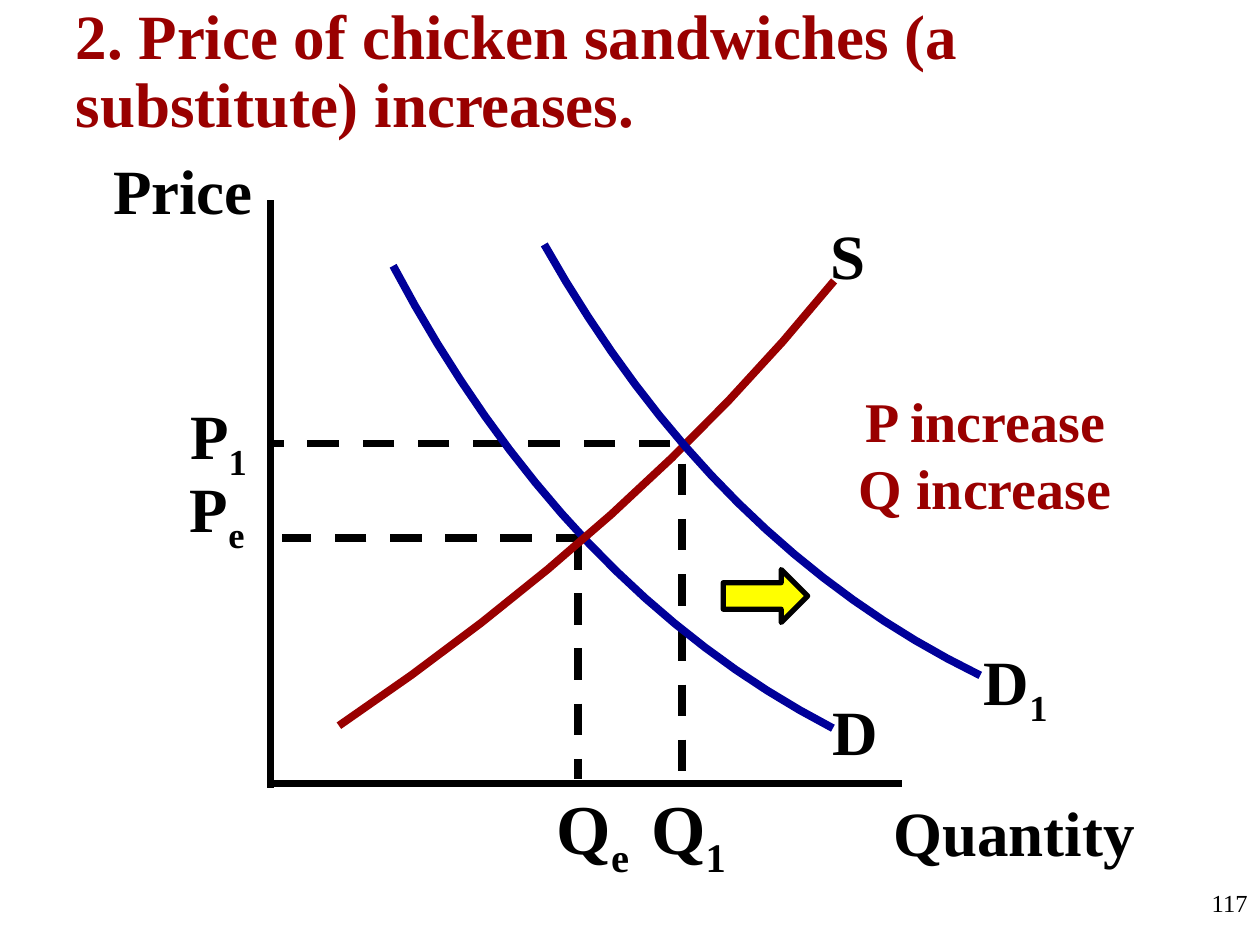
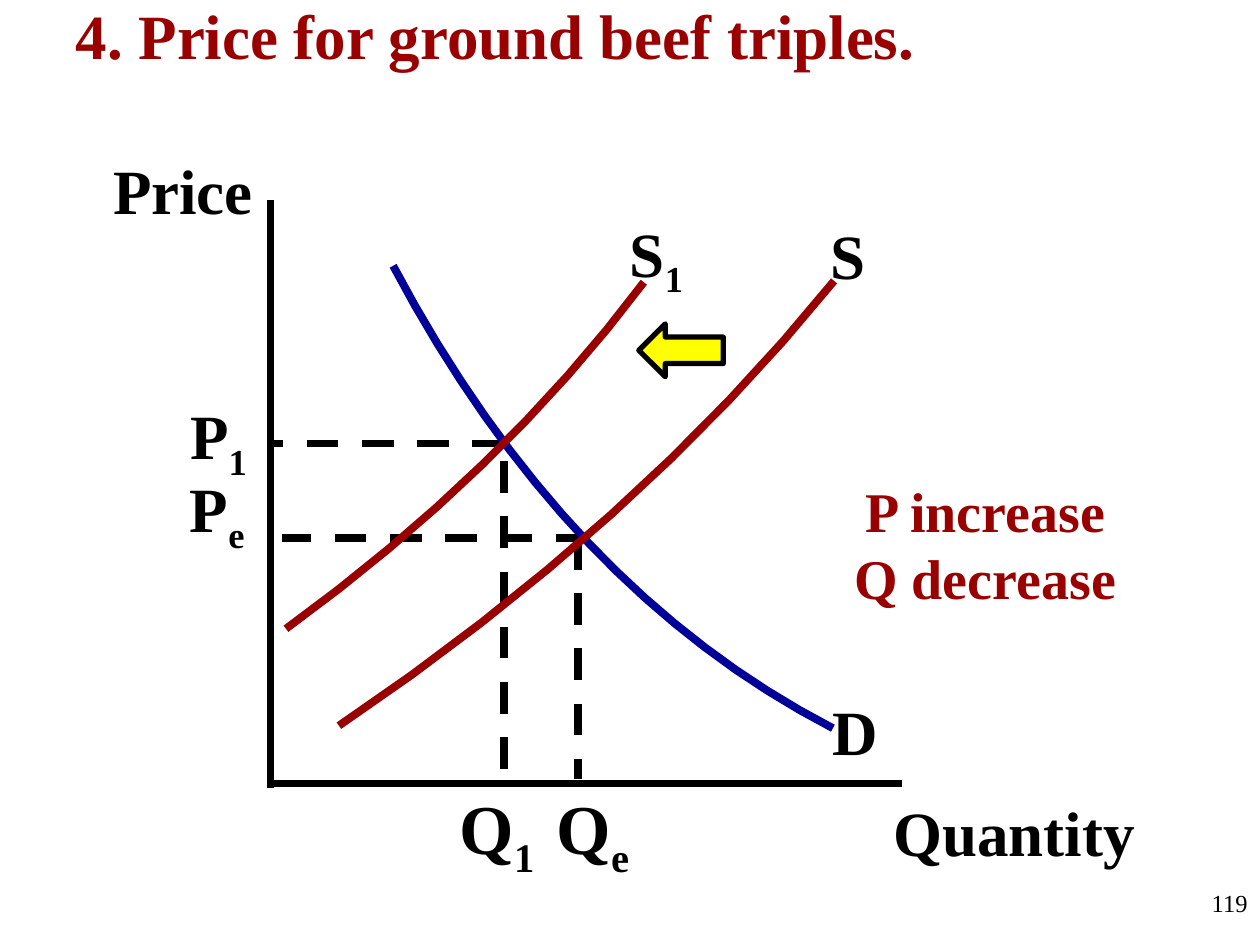
import collections

import lxml.etree
import pptx
import pptx.dml.color
import pptx.enum.dml
import pptx.enum.shapes
import pptx.enum.text
import pptx.oxml.ns
import pptx.util

FONT = "Times New Roman"
BLACK, RED, BLUE, YELLOW = "000000", "990000", "000099", "FFFF00"
CELL = 0.1
DEMAND_BEND, SUPPLY_BEND = (0.39, 0.7), (0.6, 0.45)
ALIGN = pptx.enum.text.PP_ALIGN

Box = collections.namedtuple("Box", "left top width height")
Curve = collections.namedtuple("Curve", "start end bend color steps")
TITLE = Box(0, -0.1, 100, 11.9)
NUMBER = Box(79.2, 70, 20.8, 5)
PLOT = Box(21.5, 15.9, 50.1, 46.3)

DEMAND = Curve((9.7, 41.1), (44.6, 4.4), DEMAND_BEND, BLUE, 16)
SUPPLY = Curve((5.4, 4.6), (44.7, 39.9), SUPPLY_BEND, RED, 8)
RAISED_DEMAND = Curve((21.7, 42.8), (56.3, 8.6), DEMAND_BEND, BLUE, 16)
REDUCED_SUPPLY = Curve((1.2, 12.3), (29.6, 39.8), SUPPLY_BEND, RED, 8)

SHARED_LABELS = [
    ("Price", "", (-13.5, 50.7), 15, 36),
    ("Quantity", "", (48.4, -0.3), 21.4, 36),
    ("D", "", (43.6, 7.7), 5.7, 36),
    ("S", "", (43.4, 45.5), 4.8, 36),
    ("P", "e", (-7.4, 25.4), 6.6, 36),
    ("P", "1", (-7.4, 31.2), 6.8, 36),
    ("Q", "e", (21.7, 0.4), 8.1, 40),
]
SHARED_GUIDES = [((25.1, 19.5), (0.9, 19.5)), ((24.4, 19.5), (24.4, 0.4))]

CASES = [
    dict(
        title="2. Price of chicken sandwiches (a substitute) increases.",
        number="117",
        guides=[((32.6, 25.4), (32.6, 0.4)), ((31.7, 27), (0.1, 27))],
        shifted=RAISED_DEMAND,
        labels=[("D", "1", (55.6, 11.7), 7.4, 36), ("Q", "1", (29.2, 0.4), 8.3, 40)],
        arrow=(35.9, 17),
        turn=0,
        outcome=["P increase", "Q increase"],
        outcome_at=(41.7, 32),
    ),
    dict(
        title="4. Price for ground beef triples.",
        number="119",
        guides=[((18.5, 25.6), (18.5, 0.6)), ((18.5, 27), (0.1, 27))],
        shifted=REDUCED_SUPPLY,
        labels=[("S", "1", (27.5, 45.7), 6.5, 36), ("Q", "1", (14, 0.4), 8.3, 40)],
        arrow=(29.2, 36.5),
        turn=180,
        outcome=["P increase", "Q decrease"],
        outcome_at=(41.7, 24.9),
    ),
]


def rgb(value):
    """Turn a hex string into a colour."""
    return pptx.dml.color.RGBColor.from_string(value)


def cells(*counts):
    """Turn counts of grid cells into lengths."""
    return [pptx.util.Inches(count * CELL) for count in counts]


def plot_point(plot, point):
    """Find the grid position of a (quantity, price) point in the plot."""
    return plot.left + point[0], plot.top + plot.height - point[1]


def style_font(para, size, color=BLACK, bold=True):
    """Set the font of a whole paragraph."""
    para.font.name = FONT
    para.font.size = pptx.util.Pt(size)
    para.font.bold = bold
    para.font.color.rgb = rgb(color)


def style_line(shape, color, width):
    """Set the colour and width of a shape's line."""
    shape.line.color.rgb = rgb(color)
    shape.line.width = pptx.util.Pt(width)


def add_text_frame(page, box):
    """Add a wrapping text box and return its frame."""
    frame = page.shapes.add_textbox(*cells(*box)).text_frame
    frame.word_wrap = True
    return frame


def set_title(page, box, text):
    """Place and format the title placeholder."""
    title = page.shapes.title
    title.left, title.top, title.width, title.height = cells(*box)
    frame = title.text_frame
    frame.text = text
    frame.auto_size = pptx.enum.text.MSO_AUTO_SIZE.NONE
    frame.vertical_anchor = pptx.enum.text.MSO_ANCHOR.TOP
    para = frame.paragraphs[0]
    para.alignment = ALIGN.LEFT
    para.line_spacing = 0.9
    margin = para._p.get_or_add_pPr()
    margin.set("marL", str(pptx.util.Inches(0.5)))
    margin.set("indent", "0")
    style_font(para, 36, RED)


def add_number(page, box, number):
    """Add the slide number in the lower right corner."""
    para = add_text_frame(page, box).paragraphs[0]
    para.text = number
    para.alignment = ALIGN.RIGHT
    style_font(para, 14, bold=False)


def add_line(page, plot, start, end, width, dashed=False):
    """Draw a straight black line between two plot points."""
    ends = cells(*plot_point(plot, start), *plot_point(plot, end))
    line = page.shapes.add_connector(pptx.enum.shapes.MSO_CONNECTOR.STRAIGHT, *ends)
    style_line(line, BLACK, width)
    if dashed:
        line.line.dash_style = pptx.enum.dml.MSO_LINE.DASH
    lxml.etree.SubElement(line._element.spPr, pptx.oxml.ns.qn("a:effectLst"))


def add_curve(page, plot, curve):
    """Draw a quadratic curve whose control point is a share of its span."""
    points = []
    for step in range(curve.steps + 1):
        t = step / curve.steps
        shares = [2 * t * (1 - t) * bend + t * t for bend in curve.bend]
        point = [a + (b - a) * share for a, b, share in zip(curve.start, curve.end, shares)]
        points.append(cells(*plot_point(plot, point)))
    builder = page.shapes.build_freeform(*points[0])
    builder.add_line_segments(points[1:], close=False)
    shape = builder.convert_to_shape()
    shape.shadow.inherit = False
    shape.fill.background()
    style_line(shape, curve.color, 4.5)


def add_label(page, plot, text, subscript, corner, width, size):
    """Add a label with an optional subscript at a plot point."""
    height = 7.1 if size == 36 else 7.7
    para = add_text_frame(page, Box(*plot_point(plot, corner), width, height)).paragraphs[0]
    para.add_run().text = text
    if subscript:
        span = para.add_run()
        span.text = subscript
        span._r.get_or_add_rPr().set("baseline", "-25000")
    style_font(para, size)


def add_shift_arrow(page, plot, corner, turn):
    """Add the block arrow that shows which way the curve moves."""
    arrow = page.shapes.add_shape(
        pptx.enum.shapes.MSO_SHAPE.RIGHT_ARROW, *cells(*plot_point(plot, corner), 6.7, 4.2)
    )
    arrow.rotation = turn
    arrow.shadow.inherit = False
    arrow.fill.solid()
    arrow.fill.fore_color.rgb = rgb(YELLOW)
    style_line(arrow, BLACK, 3)


def add_outcome(page, plot, corner, lines):
    """List the effects on price and quantity."""
    frame = add_text_frame(page, Box(*plot_point(plot, corner), 30, 11.8))
    frame.text = "\n".join(lines)
    for para in frame.paragraphs:
        para.alignment = ALIGN.CENTER
        style_font(para, 32, RED)


def add_market(page, plot, case):
    """Draw the supply and demand diagram of one case."""
    for start, end in SHARED_GUIDES + case["guides"]:
        add_line(page, plot, start, end, 4.5, dashed=True)
    add_line(page, plot, (0, plot.height), (0, -0.3), 4)
    add_line(page, plot, (-0.3, 0), (plot.width, 0), 4)
    for curve in (DEMAND, SUPPLY, case["shifted"]):
        add_curve(page, plot, curve)
    for label in SHARED_LABELS + case["labels"]:
        add_label(page, plot, *label)
    add_shift_arrow(page, plot, case["arrow"], case["turn"])
    add_outcome(page, plot, case["outcome_at"], case["outcome"])


def main():
    """Build the deck."""
    deck = pptx.Presentation()
    deck.slide_width, deck.slide_height = cells(100, 75)
    for case in CASES:
        page = deck.slides.add_slide(deck.slide_layouts[5])
        set_title(page, TITLE, case["title"])
        add_number(page, NUMBER, case["number"])
        add_market(page, PLOT, case)
    deck.save("out.pptx")


if __name__ == "__main__":
    main()
